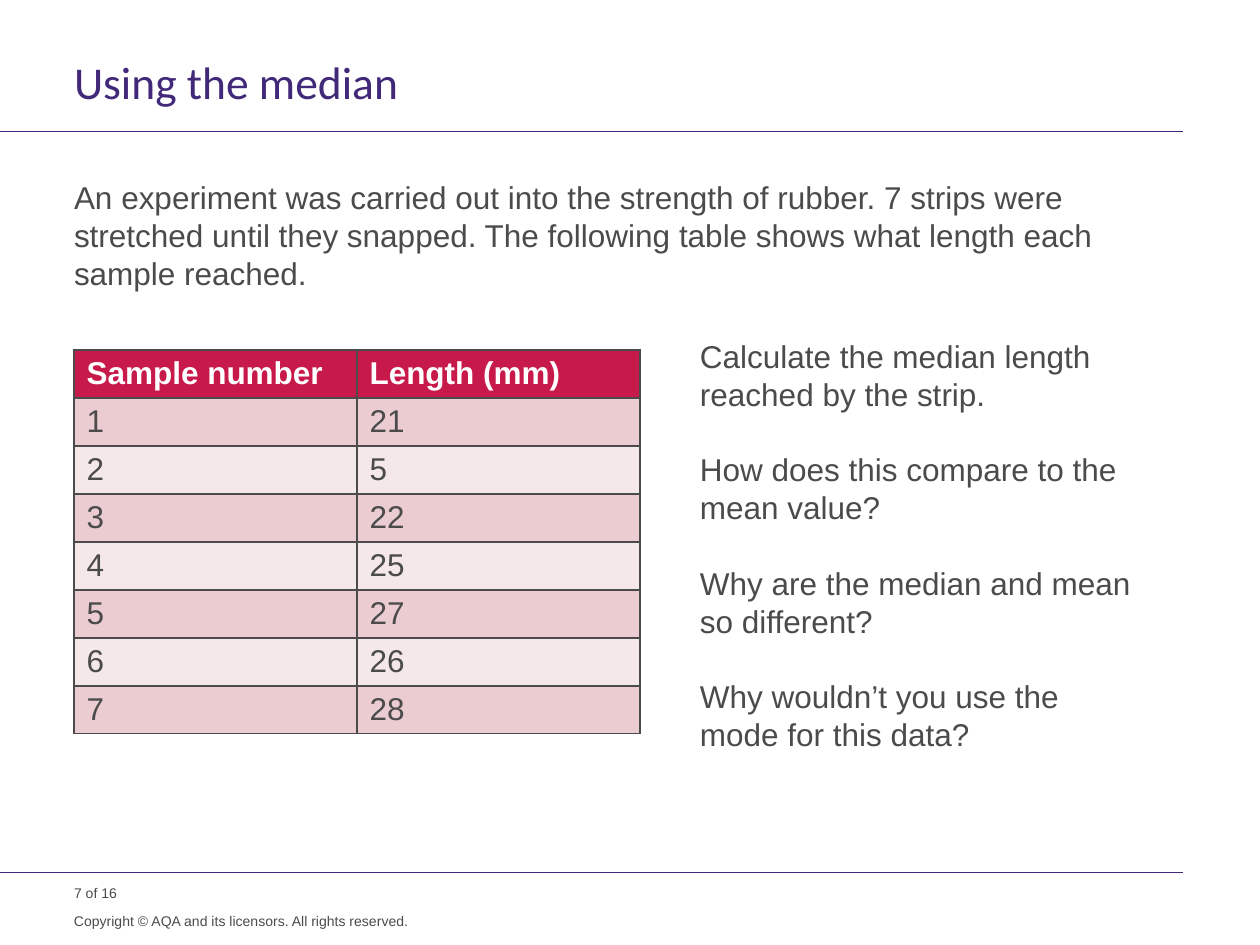
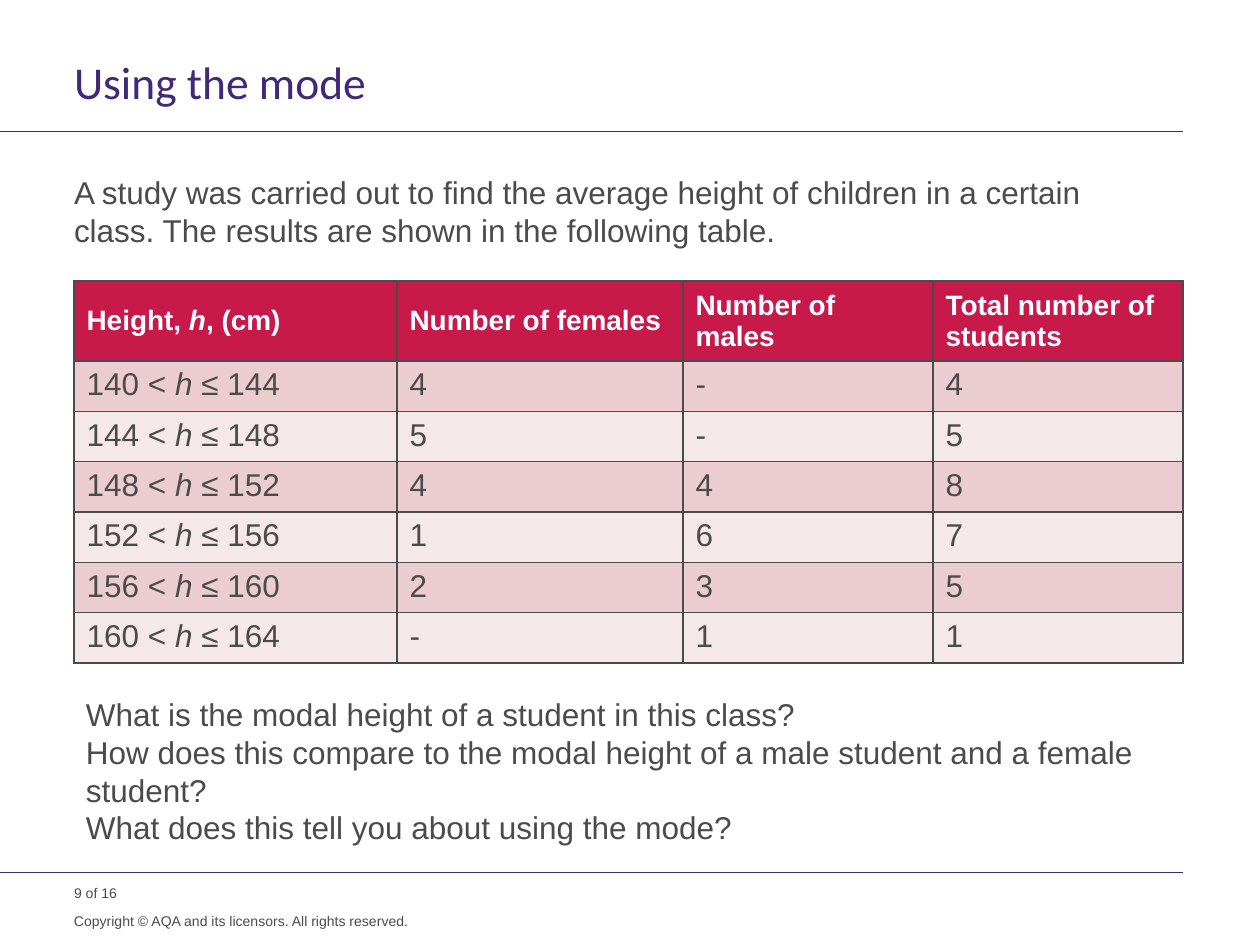
"""Build two lesson slides on using the median and the mode."""
from lxml import etree
from pptx import Presentation
from pptx import util as u
from pptx.dml import color
from pptx.enum import shapes, text
from pptx.oxml import ns

PX = 7257
PURPLE, GREY, WHITE = "412878", "4B4B4B", "FFFFFF"
CRIMSON, ROSE, BLUSH = "C8194B", "EBCCD0", "F5E8E9"
LEFT, RIGHT = 74, 1183
WIDTH = RIGHT - LEFT
paint = color.RGBColor.from_string


def write(box, lines, size, hue, face="Arial", leading=None, gap=0, insets=(0, 0, 0, 0)):
    """Put lines of text in a box, one paragraph each, and format them."""
    frame = box.text_frame
    frame.word_wrap = True
    frame.auto_size = text.MSO_AUTO_SIZE.NONE
    frame.vertical_anchor = text.MSO_ANCHOR.TOP
    frame.margin_left, frame.margin_top, frame.margin_right, frame.margin_bottom = [
        inset * PX for inset in insets]
    frame.text = "\n".join(lines)
    for index, para in enumerate(frame.paragraphs):
        properties = para._p.get_or_add_pPr()
        properties.set("marL", "0")
        properties.set("indent", "0")
        etree.SubElement(properties, ns.qn("a:buNone"))
        para.alignment = text.PP_ALIGN.LEFT
        para.space_before = u.Pt(gap if index else 0)
        if leading:
            para.line_spacing = u.Pt(leading)
        for span in para.runs:
            span.font.name, span.font.size = face, u.Pt(size)
            span.font.color.rgb = paint(hue)


def fill_cell(cell, words, size, hue, back, bold):
    """Write a bordered table cell, with the variable h in italics."""
    para = cell.text_frame.paragraphs[0]
    for part in words.partition(" h"):
        if part:
            span = para.add_run()
            span.text = part
            span.font.name, span.font.size = "Arial", u.Pt(size)
            span.font.bold, span.font.italic = bold, part == " h"
            span.font.color.rgb = paint(hue)
    properties = cell._tc.get_or_add_tcPr()
    for side in ("a:lnL", "a:lnR", "a:lnT", "a:lnB"):
        border = etree.SubElement(properties, ns.qn(side), w=str(u.Pt(1)))
        solid = etree.SubElement(border, ns.qn("a:solidFill"))
        etree.SubElement(solid, ns.qn("a:srgbClr"), val=GREY)
    cell.fill.solid()
    cell.fill.fore_color.rgb = paint(back)


lengths = [21, 5, 22, 25, 27, 26, 28]
students = [(4, "-", 4), (5, "-", 5), (4, 4, 8), (1, 6, 7), (2, 3, 5), ("-", 1, 1)]
lessons = [
    dict(
        number=7, title="Using the median",
        intro="An experiment was carried out into the strength of rubber. 7 strips were "
              "stretched until they snapped. The following table shows what length each "
              "sample reached.",
        intro_top=178, intro_height=151,
        rows=[("Sample number", "Length (mm)"), *enumerate(lengths, 1)],
        table_top=350, columns=[283, 283], header_height=48, row_height=48, header_size=18,
        questions=["Calculate the median length reached by the strip.",
                   "How does this compare to the mean value?",
                   "Why are the median and mean so different?",
                   "Why wouldn’t you use the mode for this data?"],
        questions_at=(687, 331, 471, 432), gap=21.6),
    dict(
        number=9, title="Using the mode",
        intro="A study was carried out to find the average height of children in a certain "
              "class. The results are shown in the following table.",
        intro_top=173, intro_height=389,
        rows=[("Height, h, (cm)", "Number of females", "Number of males",
               "Total number of students"),
              *[(f"{low} < h ≤ {low + 4}", *counts)
                for low, counts in zip(range(140, 164, 4), students)]],
        table_top=281, columns=[323, 286, 250, 250], header_height=80, row_height=50.4,
        header_size=16,
        questions=["What is the modal height of a student in this class?",
                   "How does this compare to the modal height of a male student and a "
                   "female student?",
                   "What does this tell you about using the mode?"],
        questions_at=(73, 689, 1110, 165), gap=0),
]

deck = Presentation()
deck.slide_width, deck.slide_height = 1260 * PX, 945 * PX

for lesson in lessons:
    page = deck.slides.add_slide(deck.slide_layouts[1])

    for rule_y in (132, 873):
        rule = page.shapes.add_connector(
            shapes.MSO_CONNECTOR.STRAIGHT, 0, rule_y * PX, RIGHT * PX, rule_y * PX)
        rule.line.color.rgb = paint(PURPLE)
        rule.line.width = u.Pt(0.6)
        etree.SubElement(rule._element.spPr, ns.qn("a:effectLst"))

    footers = [(f"{lesson['number']} of 16", 885, 198, 16, None),
               ("Copyright © AQA and its licensors. All rights reserved.", 912, 369, 33, 10)]
    for words, top, width, height, leading in footers:
        footer = page.shapes.add_textbox(LEFT * PX, top * PX, width * PX, height * PX)
        write(footer, [words], 8, GREY, leading=leading)

    title, body = page.placeholders
    title.left, title.top, title.width, title.height = LEFT * PX, 60 * PX, WIDTH * PX, 59 * PX
    write(title, [lesson["title"]], 26, PURPLE, "Calibri", 28, insets=(0, 0, 13, 0))
    body.left, body.top = LEFT * PX, lesson["intro_top"] * PX
    body.width, body.height = WIDTH * PX, lesson["intro_height"] * PX
    write(body, [lesson["intro"]], 18, GREY, leading=21.6, insets=(0, 0, 13, 0))

    rows, columns = lesson["rows"], lesson["columns"]
    heights = [lesson["header_height"]] + [lesson["row_height"]] * (len(rows) - 1)
    table = page.shapes.add_table(
        len(rows), len(columns), LEFT * PX, lesson["table_top"] * PX,
        sum(columns) * PX, round(sum(heights) * PX)).table
    for column, width in zip(table.columns, columns):
        column.width = width * PX
    for row_index, (row, values) in enumerate(zip(table.rows, rows)):
        row.height = round(heights[row_index] * PX)
        for cell, value in zip(row.cells, values):
            if row_index == 0:
                fill_cell(cell, value, lesson["header_size"], WHITE, CRIMSON, True)
                cell.vertical_anchor = text.MSO_ANCHOR.MIDDLE
            else:
                fill_cell(cell, str(value), 18, GREY, ROSE if row_index % 2 else BLUSH, False)

    questions = page.shapes.add_textbox(*[length * PX for length in lesson["questions_at"]])
    write(questions, lesson["questions"], 18, GREY, leading=21.6, gap=lesson["gap"],
          insets=(13, 6, 13, 6))

deck.save("out.pptx")
